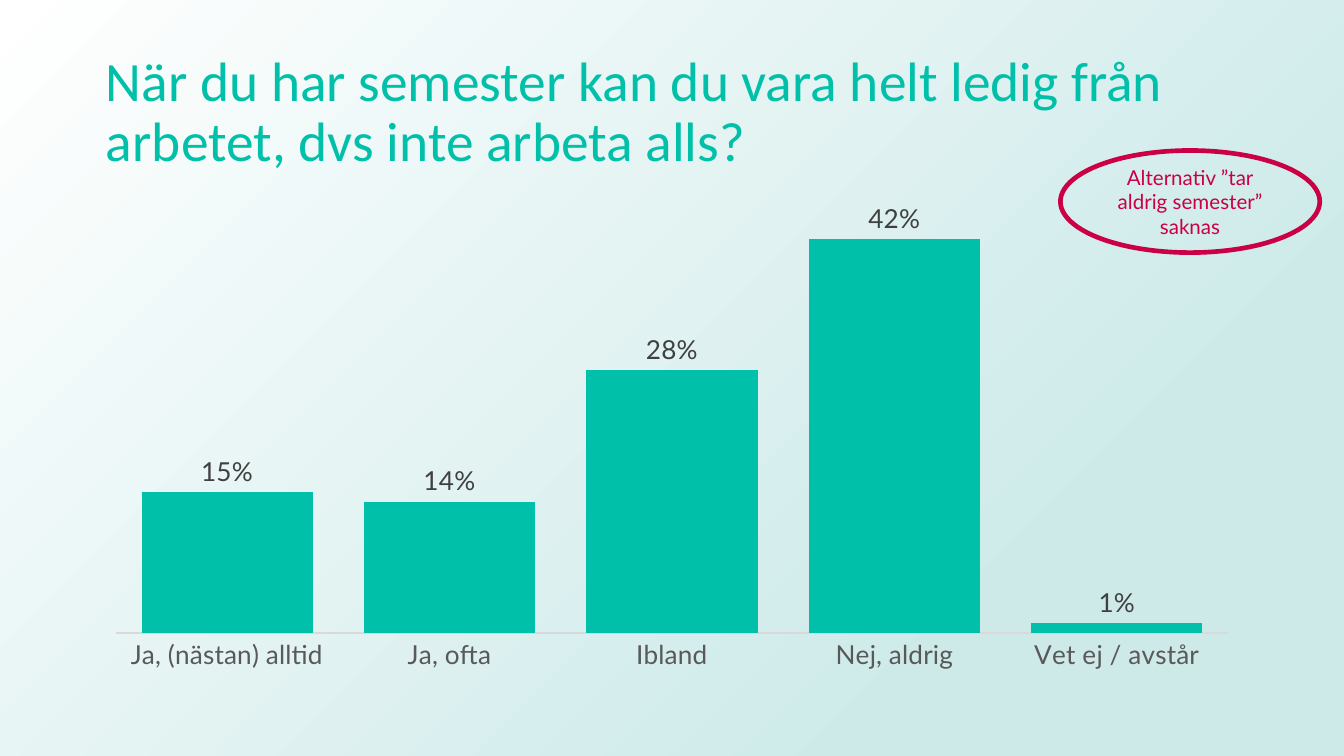
"""Build a slide with a column chart on taking time off during holidays."""
from pptx import Presentation
from pptx.chart.data import CategoryChartData
from pptx.dml.color import RGBColor
from pptx.enum.chart import XL_CHART_TYPE, XL_LABEL_POSITION, XL_TICK_MARK
from pptx.enum.shapes import MSO_SHAPE
from pptx.enum.text import MSO_ANCHOR, PP_ALIGN
from pptx.util import Inches, Pt

COLUMN = XL_CHART_TYPE.COLUMN_CLUSTERED
OUTSIDE_END = XL_LABEL_POSITION.OUTSIDE_END
NO_TICK = XL_TICK_MARK.NONE
OVAL = MSO_SHAPE.OVAL
MIDDLE = MSO_ANCHOR.MIDDLE
CENTER = PP_ALIGN.CENTER

TEAL = "00C0A9"
CRIMSON = "CB0044"


def rgb(value):
    return RGBColor.from_string(value)


def style(font, name, size, color):
    font.name = name
    font.size = Pt(size)
    font.color.rgb = rgb(color)


prs = Presentation()
prs.slide_width = Inches(10)
prs.slide_height = Inches(10) * 9 // 16
s = prs.slides.add_slide(prs.slide_layouts[6])

fill = s.background.fill
fill.gradient()
fill.gradient_angle = 315
for stop, (position, color) in zip(fill.gradient_stops, [(0, "FFFFFF"), (0.77, "CDEAE9")]):
    stop.position = position
    stop.color.rgb = rgb(color)

title = s.shapes.add_textbox(Inches(0.69), Inches(0.3), Inches(8.62), Inches(1.09))
tf = title.text_frame
tf.word_wrap = True
tf.vertical_anchor = MIDDLE
p = tf.paragraphs[0]
p.line_spacing = 0.9
r = p.add_run()
r.text = "När du har semester kan du vara helt ledig från arbetet, dvs inte arbeta alls?"
style(r.font, "Calibri", 29.7, TEAL)

data = CategoryChartData(number_format="0%")
data.categories = ["Ja, (nästan) alltid", "Ja, ofta", "Ibland", "Nej, aldrig", "Vet ej / avstår"]
data.add_series("Series 1", [0.15, 0.14, 0.28, 0.42, 0.01])
chart = s.shapes.add_chart(
    COLUMN, Inches(0.69), Inches(1.5), Inches(8.62), Inches(3.56), data
).chart
chart.has_title = False
chart.has_legend = False
style(chart.font, "Lato", 14, "000000")

cat_axis = chart.category_axis
cat_axis.major_tick_mark = NO_TICK
cat_axis.format.line.color.rgb = rgb("D9D9D9")
cat_axis.format.line.width = Pt(0.75)
style(cat_axis.tick_labels.font, "Lato", 14, "595959")

val_axis = chart.value_axis
val_axis.visible = False
val_axis.has_major_gridlines = False
val_axis.minimum_scale = 0
val_axis.maximum_scale = 0.45
val_axis.tick_labels.number_format = "0%"
val_axis.tick_labels.number_format_is_linked = False

plot = chart.plots[0]
plot.gap_width = 30
plot.vary_by_categories = False
series = plot.series[0]
series.format.fill.solid()
series.format.fill.fore_color.rgb = rgb(TEAL)
labels = series.data_labels
labels.show_value = True
labels.number_format = "0%"
labels.number_format_is_linked = False
labels.position = OUTSIDE_END
style(labels.font, "Lato", 14, "404040")

sp = s.shapes.add_shape(OVAL, Inches(7.89), Inches(1.12), Inches(1.93), Inches(0.76))
sp.shadow.inherit = False
sp.fill.background()
sp.line.color.rgb = rgb(CRIMSON)
sp.line.width = Pt(2.5)
tf = sp.text_frame
tf.word_wrap = True
tf.vertical_anchor = MIDDLE
p = tf.paragraphs[0]
p.alignment = CENTER
r = p.add_run()
r.text = "Alternativ ”tar aldrig semester” saknas"
style(r.font, "Lato", 11, CRIMSON)

prs.save("out.pptx")
